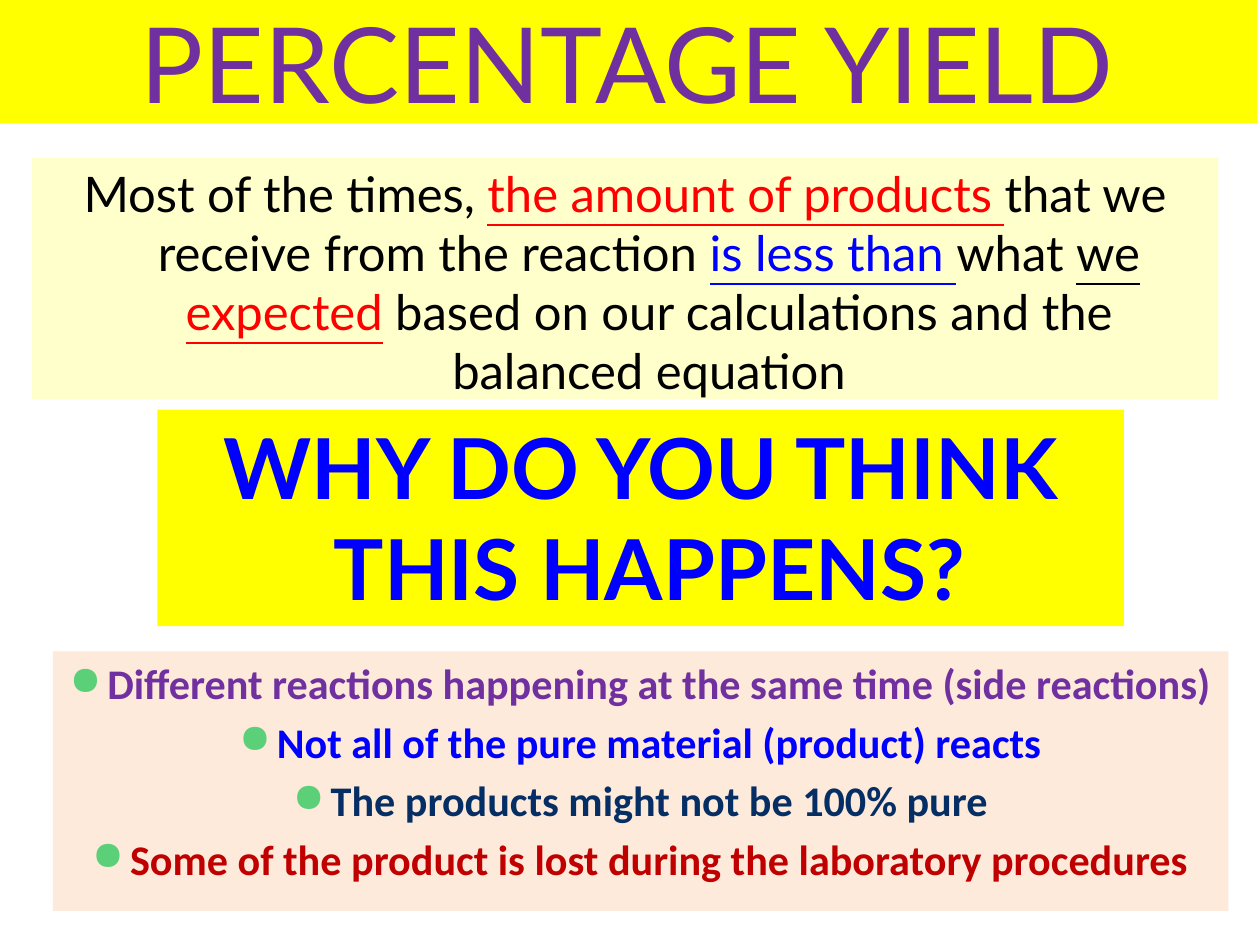
from lxml.etree import SubElement
from pptx import Presentation
from pptx.dml.color import RGBColor
from pptx.enum.shapes import MSO_SHAPE as Shape
from pptx.enum.text import MSO_ANCHOR as Anchor, PP_ALIGN as Align
from pptx.oxml.ns import qn
from pptx.util import Inches, Pt

BLACK = RGBColor(0x00, 0x00, 0x00)
RED = RGBColor(0xFF, 0x00, 0x00)
BLUE = RGBColor(0x00, 0x00, 0xFF)
PURPLE = RGBColor(0x70, 0x30, 0xA0)
NAVY = RGBColor(0x05, 0x2E, 0x65)
CRIMSON = RGBColor(0xC0, 0x00, 0x00)
YELLOW = RGBColor(0xFF, 0xFF, 0x00)
CREAM = RGBColor(0xFF, 0xFF, 0xCC)
PEACH = RGBColor(0xFD, 0xEA, 0xDA)
GREEN = RGBColor(0x5B, 0xD0, 0x78)

CLAIM = [
    ("Most of the times, ", BLACK, False),
    ("the amount of products ", RED, True),
    ("that we receive from the reaction ", BLACK, False),
    ("is less than ", BLUE, True),
    ("what ", BLACK, False),
    ("we ", BLACK, True),
    ("expected", RED, True),
    (" based on our calculations and the balanced equation", BLACK, False),
]
CAUSES = [
    ("Different reactions happening at the same time (side reactions)", PURPLE),
    ("Not all of the pure material (product) reacts", BLUE),
    ("The products might not be 100% pure", NAVY),
    ("Some of the product is lost during the laboratory procedures", CRIMSON),
]


def add_panel(slide, box, fill, anchor=Anchor.TOP):
    """Add a filled rectangle and return its text frame."""
    panel = slide.shapes.add_shape(Shape.RECTANGLE, *map(Inches, box))
    panel.shadow.inherit = False
    panel.fill.solid()
    panel.fill.fore_color.rgb = fill
    panel.line.fill.background()
    frame = panel.text_frame
    frame.word_wrap = True
    frame.vertical_anchor = anchor
    return frame


def add_para(frame, index, font, size, color, bold=False, text=""):
    """Return a centred paragraph with the given font."""
    para = frame.add_paragraph() if index else frame.paragraphs[0]
    para.text = text
    para.alignment = Align.CENTER
    para.font.name = font
    para.font.size = Pt(size)
    para.font.bold = bold
    para.font.color.rgb = color
    return para


def set_hang(para, depth):
    """Give a paragraph a hanging indent and return its properties."""
    props = para._p.get_or_add_pPr()
    props.set("marL", str(Inches(depth)))
    props.set("indent", str(-Inches(depth)))
    return props


def add_bullet(para):
    """Put a green dot before a paragraph."""
    props = set_hang(para, 0.3)
    marks = [SubElement(props, qn(tag)) for tag in ("a:buClr", "a:buSzPct", "a:buChar")]
    SubElement(marks[0], qn("a:srgbClr")).set("val", str(GREEN))
    marks[1].set("val", "95000")
    marks[2].set("char", "●")
    for spot, mark in enumerate(marks):
        props.insert(props.index(props.find(qn("a:defRPr"))), mark)


def add_title(slide, box):
    """Add the title band."""
    frame = add_panel(slide, box, YELLOW, Anchor.MIDDLE)
    add_para(frame, 0, "Lato", 60, PURPLE, text="PERCENTAGE YIELD")


def add_claim(slide, box):
    """Add the statement with its underlined phrases."""
    para = add_para(add_panel(slide, box, CREAM), 0, "Lato", 28, BLACK)
    set_hang(para, 0.38)
    for text, color, under in CLAIM:
        run = para.add_run()
        run.text = text
        run.font.color.rgb = color
        run.font.underline = under


def add_query(slide, box):
    """Add the two-line question."""
    frame = add_panel(slide, box, YELLOW)
    for index, text in enumerate(("WHY DO YOU THINK", " THIS HAPPENS?")):
        add_para(frame, index, "Lato", 48, BLUE, True, text)


def add_causes(slide, box):
    """Add the bulleted list of causes."""
    frame = add_panel(slide, box, PEACH)
    for index, (text, color) in enumerate(CAUSES):
        para = add_para(frame, index, "Calibri", 24.1, color, True, text)
        para.space_before = Pt(4.5 if index else 0)
        add_bullet(para)


def main():
    """Build and save the slide."""
    deck = Presentation()
    deck.slide_width, deck.slide_height = Inches(10), Inches(7.5)
    slide = deck.slides.add_slide(deck.slide_layouts[6])
    add_claim(slide, (0.25, 1.25, 9.42, 1.92))
    add_query(slide, (1.25, 3.25, 7.67, 1.72))
    add_causes(slide, (0.42, 5.17, 9.33, 2.06))
    add_title(slide, (-0.02, 0, 10, 0.98))
    deck.save("out.pptx")


if __name__ == "__main__":
    main()
